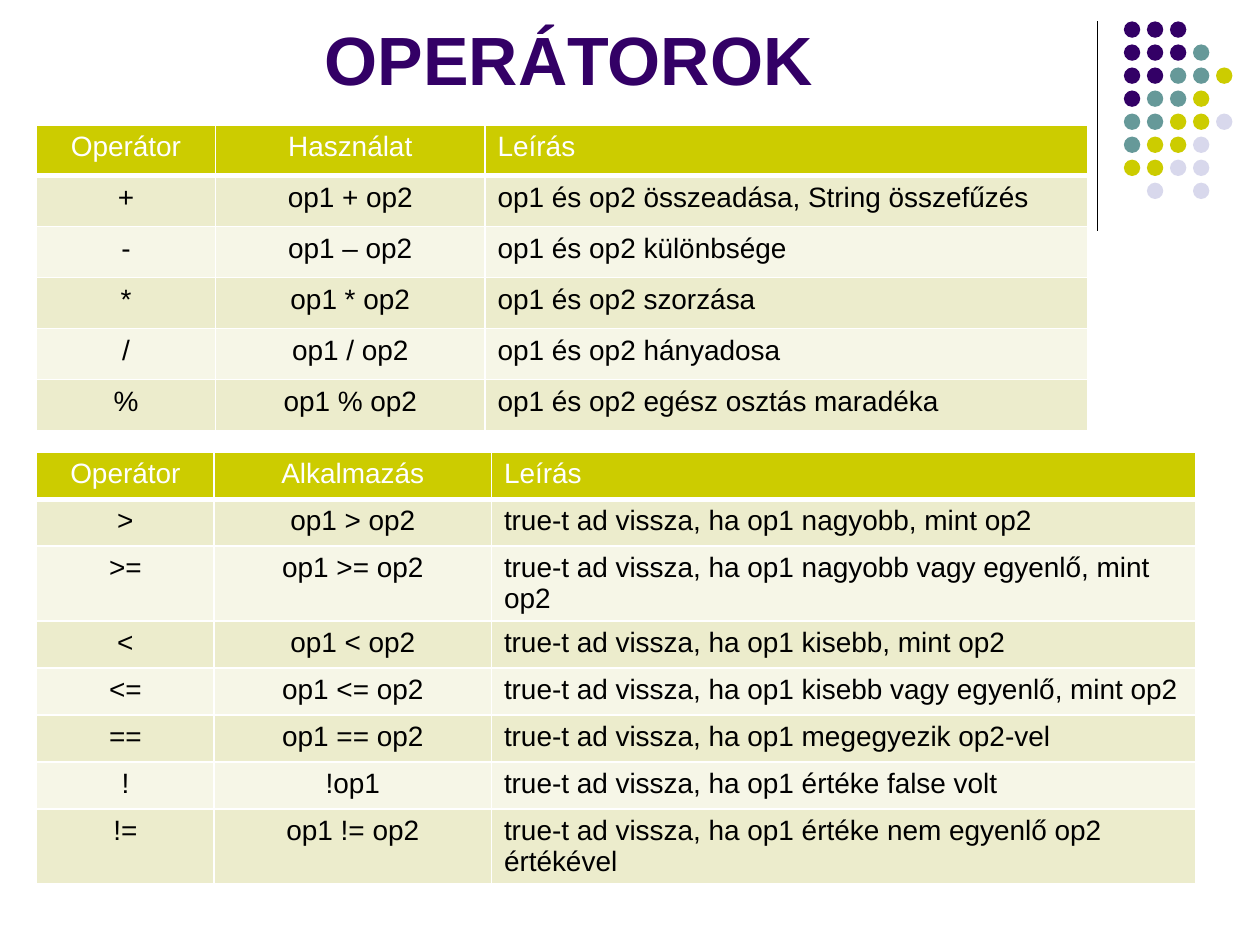
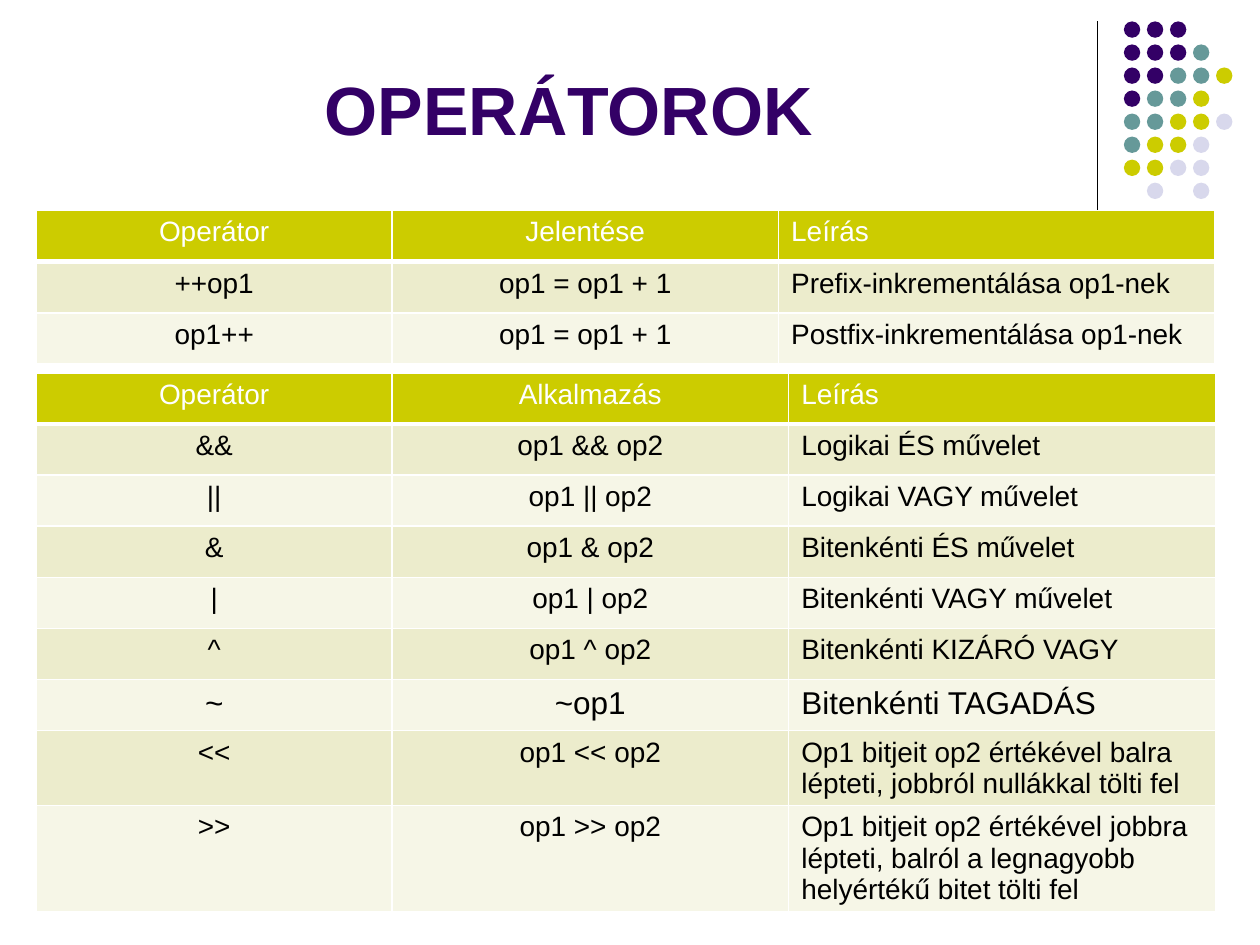
from dataclasses import dataclass

from lxml.etree import SubElement
from pptx import Presentation
from pptx.dml.color import RGBColor
from pptx.enum.shapes import MSO_CONNECTOR as Connector, MSO_SHAPE as Shape
from pptx.enum.text import MSO_ANCHOR as Anchor, MSO_AUTO_SIZE as AutoSize, PP_ALIGN as Align
from pptx.oxml.ns import qn
from pptx.util import Inches, Pt


@dataclass(frozen=True)
class Theme:
    font: str = "Arial"
    title_size: int = 39
    cell_size: int = 16
    large_size: int = 18
    purple: str = "330066"
    teal: str = "669999"
    olive: str = "CCCC00"
    lavender: str = "D8D8EC"
    band_dark: str = "ECECCC"
    band_light: str = "F6F6E7"
    black: str = "000000"
    white: str = "FFFFFF"


theme = Theme()


def add_span(para, text, size, color, bold=False):
    span = para.add_run()
    span.text = text
    span.font.name = theme.font
    span.font.size = Pt(size)
    span.font.bold = bold
    span.font.color.rgb = RGBColor.from_string(color)


def add_cell_borders(cell, bottom_width):
    properties = cell._tc.get_or_add_tcPr()
    for side, width in (("L", 1), ("R", 1), ("T", 1), ("B", bottom_width)):
        line = SubElement(properties, qn(f"a:ln{side}"), w=str(Pt(width)))
        fill = SubElement(line, qn("a:solidFill"))
        SubElement(fill, qn("a:srgbClr"), val=theme.white)


# Each table: top, height, column widths, rows (header first)
arithmetic = (0.99, 2.43, (1.42, 2.14, 4.78), [
    ("Operátor", "Használat", "Leírás"),
    ("+", "op1 + op2", "op1 és op2 összeadása, String összefűzés"),
    ("-", "op1 – op2", "op1 és op2 különbsége"),
    ("*", "op1 * op2", "op1 és op2 szorzása"),
    ("/", "op1 / op2", "op1 és op2 hányadosa"),
    ("%", "op1 % op2", "op1 és op2 egész osztás maradéka"),
])
comparison = (3.59, 2.98, (1.41, 2.2, 5.59), [
    ("Operátor", "Alkalmazás", "Leírás"),
    (">", "op1 > op2", "true-t ad vissza, ha op1 nagyobb, mint op2"),
    (">=", "op1 >= op2", "true-t ad vissza, ha op1 nagyobb vagy egyenlő, mint op2"),
    ("<", "op1 < op2", "true-t ad vissza, ha op1 kisebb, mint op2"),
    ("<=", "op1 <= op2", "true-t ad vissza, ha op1 kisebb vagy egyenlő, mint op2"),
    ("==", "op1 == op2", "true-t ad vissza, ha op1 megegyezik op2-vel"),
    ("!", "!op1", "true-t ad vissza, ha op1 értéke false volt"),
    ("!=", "op1 != op2", "true-t ad vissza, ha op1 értéke nem egyenlő op2 értékével"),
])
increment = (1.67, 1.22, (2.82, 3.07, 3.46), [
    ("Operátor", "Jelentése", "Leírás"),
    ("++op1", "op1 = op1 + 1", "Prefix-inkrementálása op1-nek"),
    ("op1++", "op1 = op1 + 1", "Postfix-inkrementálása op1-nek"),
])
logic = (2.96, 3.65, (2.82, 3.15, 3.39), [
    ("Operátor", "Alkalmazás", "Leírás"),
    ("&&", "op1 && op2", "Logikai ÉS művelet"),
    ("||", "op1 || op2", "Logikai VAGY művelet"),
    ("&", "op1 & op2", "Bitenkénti ÉS művelet"),
    ("|", "op1 | op2", "Bitenkénti VAGY művelet"),
    ("^", "op1 ^ op2", "Bitenkénti KIZÁRÓ VAGY"),
    ("~", "~op1", "Bitenkénti TAGADÁS"),
    ("<<", "op1 << op2", "Op1 bitjeit op2 értékével balra lépteti, jobbról nullákkal tölti fel"),
    (">>", "op1 >> op2", "Op1 bitjeit op2 értékével jobbra lépteti, "
     "balról a legnagyobb helyértékű bitet tölti fel"),
])
slides = [(0.05, (arithmetic, comparison)), (0.44, (increment, logic))]

deck = Presentation()
deck.slide_width, deck.slide_height = Inches(10), Inches(7.5)
layout = deck.slide_layouts[5]
for holder in list(layout.placeholders)[1:]:
    layout.shapes.element.remove(holder.element)
pages = [deck.slides.add_slide(layout) for _ in slides]

# Rule and dot pattern: drawn once, then moved to the shared layout
rule = pages[0].shapes.add_connector(
    Connector.STRAIGHT, Inches(8.71), Inches(0.17), Inches(8.71), Inches(1.83))
rule.line.color.rgb = RGBColor.from_string(theme.black)
rule.line.width = Pt(0.75)
SubElement(rule.element.spPr, qn("a:effectLst"))

dot_colors = {"P": theme.purple, "T": theme.teal, "O": theme.olive, "L": theme.lavender}
dot_rows = ["PPP", "PPPT", "PPTTO", "PTTO", "TTOOL", "TOOL", "OOLL", ".L.L"]
dot_pitch = 1.28 / 7
dots = pages[0].shapes.add_group_shape()
for row, letters in enumerate(dot_rows):
    for column, letter in enumerate(letters):
        if letter == ".":
            continue
        dot = dots.shapes.add_shape(
            Shape.OVAL, Inches(8.92 + column * dot_pitch), Inches(0.17 + row * dot_pitch),
            Inches(0.13), Inches(0.13))
        dot.shadow.inherit = False
        dot.fill.solid()
        dot.fill.fore_color.rgb = RGBColor.from_string(dot_colors[letter])
        dot.line.fill.background()
for ornament in (rule, dots):
    layout.shapes.element.append(ornament.element)

for page, (title_top, tables) in zip(pages, slides):
    title = page.shapes.title
    title.left, title.top = Inches(0.28), Inches(title_top)
    title.width, title.height = Inches(8.47), Inches(0.79)
    frame = title.text_frame
    frame.auto_size = AutoSize.NONE
    frame.vertical_anchor = Anchor.BOTTOM
    frame.paragraphs[0].alignment = Align.CENTER
    add_span(frame.paragraphs[0], "OPERÁTOROK", theme.title_size, theme.purple, bold=True)

    for top, height, widths, rows in tables:
        table = page.shapes.add_table(
            len(rows), len(widths), Inches(0.29), Inches(top),
            Inches(sum(widths)), Inches(height)).table
        table.horz_banding = False
        for column, width in zip(table.columns, widths):
            column.width = Inches(width)
        for row, texts in enumerate(rows):
            header = row == 0
            band = theme.band_dark if row % 2 else theme.band_light
            size = theme.large_size if texts[0] == "~" else theme.cell_size
            for column, text in enumerate(texts):
                cell = table.cell(row, column)
                add_cell_borders(cell, bottom_width=3 if header else 1)
                cell.fill.solid()
                cell.fill.fore_color.rgb = RGBColor.from_string(theme.olive if header else band)
                para = cell.text_frame.paragraphs[0]
                para.alignment = Align.LEFT if column == 2 else Align.CENTER
                add_span(para, text, size, theme.white if header else theme.black)

deck.save("out.pptx")
